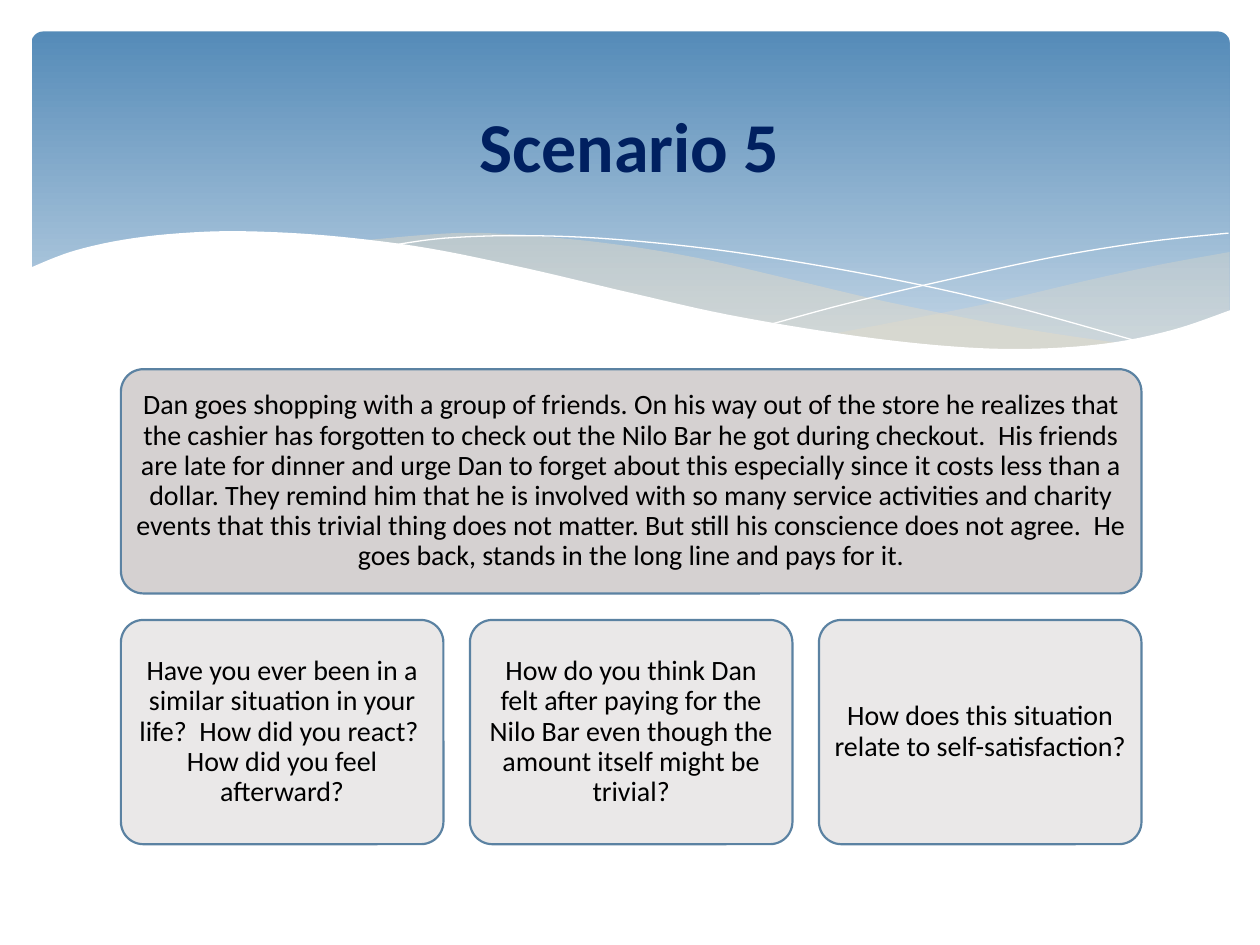
from lxml import etree
from pptx import Presentation
from pptx import util as u
from pptx.dml.color import RGBColor
from pptx.enum import shapes, text
from pptx.oxml.ns import qn

COLUMNS, ROWS = 10, 7.5
CELL = u.Inches(1)
STEPS = 6
COLORS = {
    "sky_top": "558BB8", "sky_bottom": "BFD3E4", "sand": "EBDDC3",
    "white": "FFFFFF", "story": "D5D1D1", "question": "EAE8E8",
    "border": "5B82A2", "body": "000000", "title": "002060",
}
STORY = (
    "Dan goes shopping with a group of friends. On his way out of the store he realizes that "
    "the cashier has forgotten to check out the Nilo Bar he got during checkout.  His friends "
    "are late for dinner and urge Dan to forget about this especially since it costs less than "
    "a dollar. They remind him that he is involved with so many service activities and charity "
    "events that this trivial thing does not matter. But still his conscience does not agree.  "
    "He goes back, stands in the long line and pays for it."
)
QUESTIONS = [
    "Have you ever been in a similar situation in your life?  How did you react?  "
    "How did you feel afterward?",
    "How do you think Dan felt after paying for the Nilo Bar even though the amount itself "
    "might be trivial?",
    "How does this situation relate to self-satisfaction?",
]
RIGHT_SWELL = [
    [(9.76, 2), (9.21, 2.1), (8.61, 2.23), (7.79, 2.42), (6.61, 2.65)],
    [(6.61, 2.65), (7.32, 2.74), (8.03, 2.78), (8.63, 2.75), (9.21, 2.65), (9.76, 2.47)],
]
LONG_SWELL = [
    [(8.93, 2.73), (8.07, 2.6), (7.06, 2.4), (6.29, 2.22), (5.55, 2.05), (4.89, 1.94),
     (4.2, 1.87), (3.61, 1.85), (2.86, 1.91)],
    [(2.86, 1.91), (3.62, 2.03), (4.49, 2.22), (5.3, 2.4), (6.18, 2.58), (6.95, 2.7),
     (7.61, 2.77), (8.18, 2.78), (8.93, 2.73)],
]
FALLING_LINE = [(3.09, 1.95), (3.53, 1.89), (4.16, 1.87), (4.89, 1.9), (5.82, 2),
                (6.95, 2.19), (7.95, 2.41), (9.07, 2.72)]
RISING_LINE = [(6.13, 2.57), (6.72, 2.41), (7.48, 2.23), (8.36, 2.04), (9.1, 1.92), (9.75, 1.85)]
FOREGROUND = [
    [(9.77, 2.46), (9.3, 2.62), (8.75, 2.73), (8.09, 2.77), (7.44, 2.74), (6.68, 2.65),
     (5.79, 2.5), (5.03, 2.33), (4.18, 2.13), (3.4, 1.97), (2.71, 1.88), (2.11, 1.84),
     (1.61, 1.84), (1.06, 1.89), (0.59, 1.99), (0.23, 2.13)],
    [(0.23, 3.29), (9.77, 3.29)],
]


def color(name):
    """Return the named colour."""
    return RGBColor.from_string(COLORS[name])


def cells(*lengths):
    """Turn grid lengths into slide units."""
    return [round(length * CELL) for length in lengths]


def smooth(knots):
    """Return points along a Catmull-Rom curve through the knots."""
    padded = [knots[0], *knots, knots[-1]]
    points = [knots[0]]
    for a, b, c, d in zip(padded, padded[1:], padded[2:], padded[3:]):
        for step in range(1, STEPS + 1):
            t = step / STEPS
            points.append(tuple(
                (2 * q + (r - p) * t + (2 * p - 5 * q + 4 * r - s) * t ** 2
                 + (3 * q - p - 3 * r + s) * t ** 3) / 2
                for p, q, r, s in zip(a, b, c, d)))
    return points


def add_curve(page, edges, closed):
    """Draw a freeform through the smoothed edges."""
    points = [cells(*point) for edge in edges for point in smooth(edge)]
    builder = page.shapes.build_freeform(*points[0], scale=1.0)
    builder.add_line_segments(points[1:], close=closed)
    curve = builder.convert_to_shape()
    curve.shadow.inherit = False
    return curve


def add_wave(page, edges, name, opacity=100):
    """Add a filled wave without an outline."""
    wave = add_curve(page, edges, True)
    wave.line.fill.background()
    wave.fill.solid()
    wave.fill.fore_color.rgb = color(name)
    if opacity < 100:
        tint = wave.fill._xPr.find(".//" + qn("a:srgbClr"))
        etree.SubElement(tint, qn("a:alpha")).set("val", str(opacity * 1000))


def add_hairline(page, knots):
    """Add a thin white curve."""
    curve = add_curve(page, [knots], False)
    curve.fill.background()
    curve.line.color.rgb = color("white")
    curve.line.width = u.Pt(0)


def add_rounded(page, place, corner):
    """Add a rounded rectangle at a grid place."""
    box = page.shapes.add_shape(shapes.MSO_SHAPE.ROUNDED_RECTANGLE, *cells(*place))
    box.adjustments[0] = corner
    box.shadow.inherit = False
    return box


def add_sky(page):
    """Add the gradient panel behind the title."""
    sky = add_rounded(page, (0.25, 0.25, COLUMNS - 0.49, 2.7), 0.034)
    sky.line.fill.background()
    sky.fill.gradient()
    sky.fill.gradient_angle = 270
    stops = zip(sky.fill.gradient_stops, ("sky_top", "sky_bottom"), (0, 0.9))
    for stop, name, position in stops:
        stop.color.rgb = color(name)
        stop.position = position


def write(box, words, size, name, bold=False):
    """Write one centred paragraph into a box."""
    frame = box.text_frame
    frame.word_wrap = True
    frame.vertical_anchor = text.MSO_ANCHOR.MIDDLE
    para = frame.paragraphs[0]
    para.alignment = text.PP_ALIGN.CENTER
    span = para.add_run()
    span.text = words
    span.font.name = "Calibri"
    span.font.size = u.Pt(size)
    span.font.bold = bold
    span.font.color.rgb = color(name)
    return frame


def add_card(page, place, words, name):
    """Add a bordered card with body text."""
    card = add_rounded(page, place, 0.1)
    card.fill.solid()
    card.fill.fore_color.rgb = color(name)
    card.line.color.rgb = color("border")
    card.line.width = u.Pt(1.25)
    frame = write(card, words, 16, "body")
    frame.margin_left = frame.margin_right = u.Inches(0.07)
    frame.margin_top = frame.margin_bottom = u.Inches(0.07)
    frame.paragraphs[0].line_spacing = 0.9


def add_cards(page):
    """Lay out the story above a row of questions."""
    left, top, width, height, gap = 0.96, 2.93, 8.1, 1.78, 0.21
    add_card(page, (left, top, width, height), STORY, "story")
    share = (width + gap) / len(QUESTIONS)
    for column, question in enumerate(QUESTIONS):
        place = (left + column * share, top + height + gap, share - gap, height)
        add_card(page, place, question, "question")


def main():
    """Build and save the slide."""
    deck = Presentation()
    deck.slide_width, deck.slide_height = cells(COLUMNS, ROWS)
    page = deck.slides.add_slide(deck.slide_layouts[6])
    add_sky(page)
    add_wave(page, RIGHT_SWELL, "sand", 29)
    add_wave(page, LONG_SWELL, "sand", 40)
    add_hairline(page, FALLING_LINE)
    add_hairline(page, RISING_LINE)
    add_wave(page, FOREGROUND, "white")
    add_cards(page)
    title = page.shapes.add_textbox(*cells(0.08, 0.71, 9.83, 0.87))
    write(title, "Scenario 5", 40, "title", True)
    deck.save("out.pptx")


if __name__ == "__main__":
    main()
